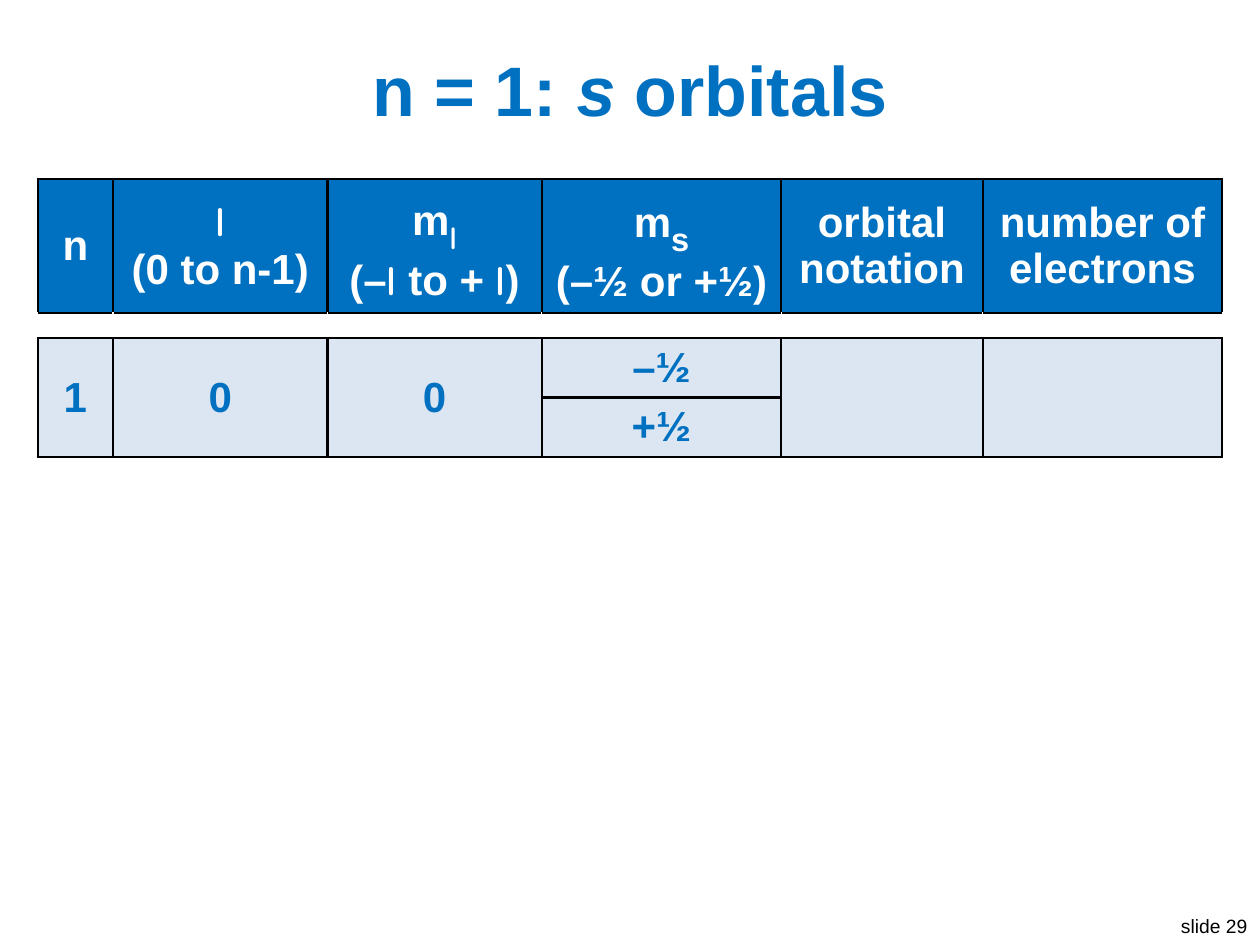
from lxml import etree
from pptx import Presentation
from pptx import util as u
from pptx.dml.color import RGBColor
from pptx.enum import text
from pptx.oxml import ns

BLUE, PALE, WHITE, BLACK = "0070C0", "DCE6F2", "FFFFFF", "000000"
SANS, SCRIPT = "Arial", "Comic Neue"
COLUMN_WIDTHS = [1.52, 4.32, 4.32, 4.83, 4.06, 4.83]
ROW_HEIGHTS = [2.69, 0.51, 1.2, 1.2]
HEADER, GAP, FIRST, LAST = range(4)
SPIN_COLUMN = 3

# A cell is a list of paragraphs, a paragraph a list of (words, style) runs.
ELL = ("l", {"font": SCRIPT})
HEADINGS = [
    [[("n", {})]],
    [[ELL], [("(0 to n-1)", {})]],
    [[("m", {}), ("l", {"font": SCRIPT, "size": 32, "baseline": -25})],
     [("(–", {}), ELL, (" to + ", {}), ELL, (")", {})]],
    [[("m", {}), ("s", {"size": 32, "baseline": -25})], [("(–½ or +½)", {})]],
    [[("orbital notation", {})]],
    [[("number of electrons", {})]],
]
QUANTUM_NUMBERS = ["1", "0", "0", "–½", "", ""]


def rgb(color):
    return RGBColor.from_string(color)


def add_run(paragraph, words, color, size=24, font=SANS, bold=True,
            italic=False, baseline=0):
    run = paragraph.add_run()
    run.text = words
    run.font.name, run.font.size = font, u.Pt(size)
    run.font.bold, run.font.italic = bold, italic
    run.font.color.rgb = rgb(color)
    if baseline:
        run.font._element.set("baseline", str(baseline * 1000))


def set_borders(cell, sides, color=BLACK, width=1.5):
    """Draw the given sides, named in the order L, R, T, B."""
    properties = cell._tc.get_or_add_tcPr()
    for position, side in enumerate(sides):
        line = etree.Element(ns.qn(f"a:ln{side}"), w=str(u.Pt(width)))
        fill = etree.SubElement(line, ns.qn("a:solidFill"))
        etree.SubElement(fill, ns.qn("a:srgbClr"), val=color)
        properties.insert(position, line)


def fill_cell(cell, paragraphs, background, color):
    cell.fill.solid()
    cell.fill.fore_color.rgb = rgb(background)
    cell.vertical_anchor = text.MSO_ANCHOR.MIDDLE
    frame = cell.text_frame
    for index, runs in enumerate(paragraphs):
        paragraph = frame.add_paragraph() if index else frame.paragraphs[0]
        paragraph.alignment = text.PP_ALIGN.CENTER
        for words, style in runs:
            add_run(paragraph, words, color, **style)


def clear_gap_cell(cell):
    """Leave the cell open and small enough for a narrow row."""
    cell.fill.background()
    cell.margin_top = cell.margin_bottom = 0
    paragraph = cell.text_frame.paragraphs[0]._p
    etree.SubElement(paragraph, ns.qn("a:endParaRPr"), sz="800")


def place_title(slide, left, top, width, height):
    title = slide.shapes.title
    title.left, title.top, title.width, title.height = map(
        u.Cm, (left, top, width, height))
    title.text_frame.vertical_anchor = text.MSO_ANCHOR.MIDDLE
    paragraph = title.text_frame.paragraphs[0]
    paragraph.alignment = text.PP_ALIGN.CENTER
    for words, italic in [("n = 1: ", False), ("s", True), (" orbitals", False)]:
        add_run(paragraph, words, BLUE, size=40, italic=italic)


def add_orbital_table(slide, left, top):
    table = slide.shapes.add_table(
        len(ROW_HEIGHTS), len(COLUMN_WIDTHS), u.Cm(left), u.Cm(top),
        u.Cm(sum(COLUMN_WIDTHS)), u.Cm(sum(ROW_HEIGHTS))).table
    table.first_row = table.horz_banding = False
    for row, height in zip(table.rows, ROW_HEIGHTS):
        row.height = u.Cm(height)
    for index, width in enumerate(COLUMN_WIDTHS):
        table.columns[index].width = u.Cm(width)
        header, gap, first, last = (
            table.cell(row, index) for row in (HEADER, GAP, FIRST, LAST))
        fill_cell(header, HEADINGS[index], BLUE, WHITE)
        clear_gap_cell(gap)
        value = QUANTUM_NUMBERS[index]
        fill_cell(first, [[(value, {})]] if value else [], PALE, BLUE)
        split = index == SPIN_COLUMN
        fill_cell(last, [[("+½", {})]] if split else [], PALE, BLUE)
        if not split:
            first.merge(last)
        set_borders(header, "LRTB")
        set_borders(gap, "TB")
        set_borders(first, "LRTB")
        set_borders(last, "LRTB" if split else "LRB")


def add_slide_number(slide, left, top, width, height):
    box = slide.shapes.add_textbox(*map(u.Cm, (left, top, width, height)))
    box.text_frame.word_wrap = False
    paragraph = box.text_frame.paragraphs[0]
    paragraph.alignment = text.PP_ALIGN.RIGHT
    add_run(paragraph, "slide 29", BLACK, size=11, bold=False)


def main():
    presentation = Presentation()
    presentation.slide_width, presentation.slide_height = u.Cm(25.4), u.Cm(19.05)
    slide = presentation.slides.add_slide(presentation.slide_layouts[5])
    place_title(slide, 0.51, 0.76, 24.38, 2.03)
    add_orbital_table(slide, 0.76, 3.61)
    add_slide_number(slide, 23.5, 18.31, 1.9, 0.74)
    presentation.save("out.pptx")


if __name__ == "__main__":
    main()
